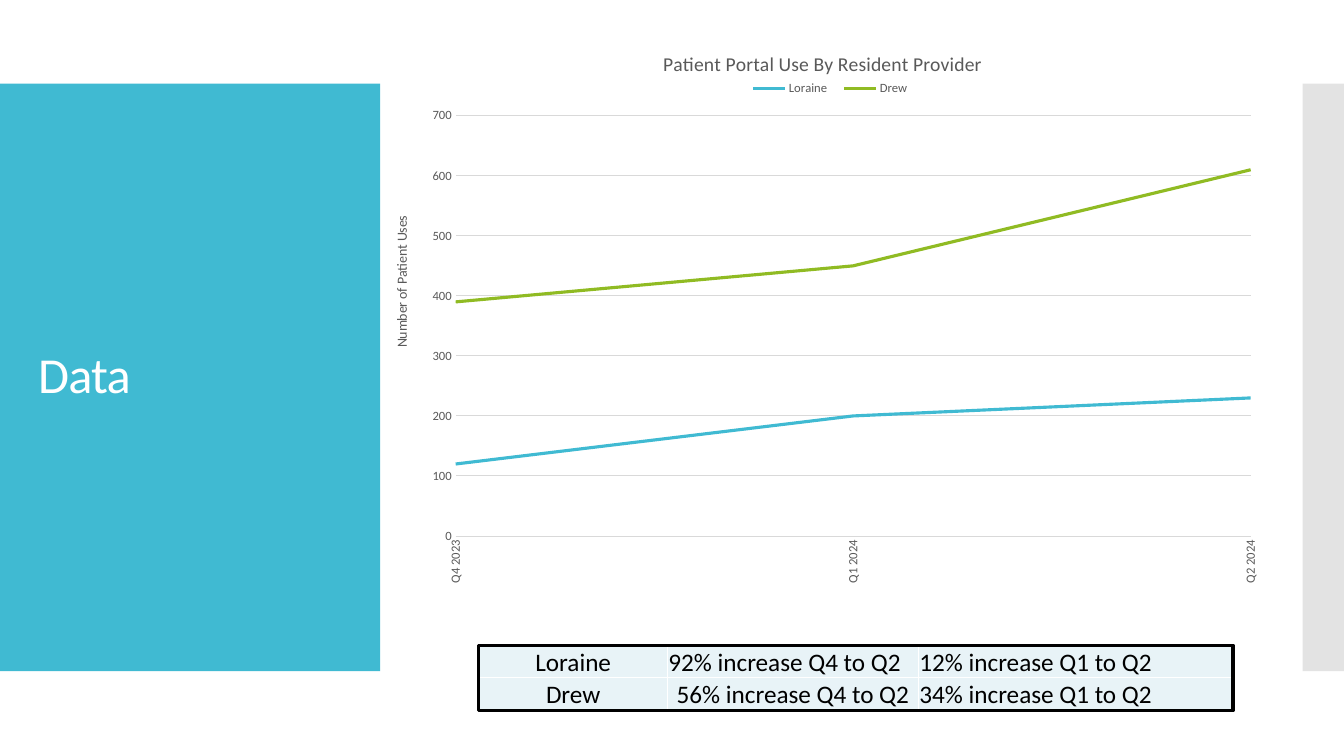
from dataclasses import dataclass

from lxml import etree
from pptx import Presentation
from pptx.chart.data import CategoryChartData
from pptx.dml.color import RGBColor
from pptx.enum.chart import XL_CHART_TYPE as ChartType
from pptx.enum.chart import XL_LEGEND_POSITION as LegendPosition
from pptx.enum.chart import XL_MARKER_STYLE as MarkerStyle
from pptx.enum.chart import XL_TICK_MARK as TickMark
from pptx.enum.shapes import MSO_SHAPE as ShapeType
from pptx.enum.text import MSO_ANCHOR as Anchor
from pptx.enum.text import PP_ALIGN as Align
from pptx.oxml.ns import qn
from pptx.util import Inches, Pt

FONT = "Calibri"
WHITE = RGBColor(0xFF, 0xFF, 0xFF)
BLACK = RGBColor(0x00, 0x00, 0x00)
TEAL = RGBColor(0x40, 0xBA, 0xD2)
GREEN = RGBColor(0x90, 0xBB, 0x23)
SIDE_GRAY = RGBColor(0xC8, 0xC8, 0xC8)
TEXT_GRAY = RGBColor(0x59, 0x59, 0x59)
GRID_GRAY = RGBColor(0xD9, 0xD9, 0xD9)
CELL_BLUE = RGBColor(0xE8, 0xF3, 0xF7)


@dataclass
class Box:
    left: float
    top: float
    width: float
    height: float

    def lengths(self) -> list:
        return [Inches(v) for v in (self.left, self.top, self.width, self.height)]


@dataclass
class Panel:
    box: Box
    fill: RGBColor | None = None
    alpha: int | None = None
    line: RGBColor | None = None


@dataclass
class Provider:
    name: str
    uses: tuple
    color: RGBColor
    growth: tuple
    growth_align: Align


QUARTERS = ("Q4 2023", "Q1 2024", "Q2 2024")
PROVIDERS = (
    Provider("Loraine", (120, 200, 230), TEAL,
             ("92% increase Q4 to Q2", "12% increase Q1 to Q2"), Align.LEFT),
    Provider("Drew", (390, 450, 610), GREEN,
             ("56% increase Q4 to Q2", "34% increase Q1 to Q2"), Align.CENTER),
)
TABLE_BOX = Box(4.75, 6.4, 7.48, 0.65)
COLUMN_WIDTHS = (1.87, 2.49, 3.11)
SIDE_PANELS = (
    Panel(Box(0, 0.83, 3.77, 5.83), fill=TEAL),
    Panel(Box(12.92, 0.83, 0.42, 5.83), fill=SIDE_GRAY, alpha=50),
)
TABLE_FRAME = Panel(TABLE_BOX, line=BLACK)


def set_font(font, size: float, color: RGBColor) -> None:
    formats = {"name": FONT, "size": Pt(size), "bold": False}
    for attribute, value in formats.items():
        setattr(font, attribute, value)
    font.color.rgb = color


def add_panel(slide, panel: Panel) -> None:
    shape = slide.shapes.add_shape(ShapeType.RECTANGLE, *panel.box.lengths())
    shape.shadow.inherit = False
    if panel.fill is None:
        shape.fill.background()
    else:
        shape.fill.solid()
        shape.fill.fore_color.rgb = panel.fill
    if panel.alpha is not None:
        color = shape.fill._xPr.find(".//" + qn("a:srgbClr"))
        etree.SubElement(color, qn("a:alpha"), val=str(panel.alpha * 1000))
    if panel.line is None:
        shape.line.fill.background()
    else:
        shape.line.color.rgb = panel.line
        shape.line.width = Pt(2.25)


def add_heading(slide) -> None:
    frame = slide.shapes.add_textbox(*Box(0.28, 1.23, 3.22, 5.03).lengths()).text_frame
    frame.word_wrap = True
    frame.vertical_anchor = Anchor.MIDDLE
    paragraph = frame.paragraphs[0]
    paragraph.line_spacing = 0.9
    run = paragraph.add_run()
    run.text = "Data"
    set_font(run.font, 36, WHITE)
    run.font._element.set("spc", "-60")


def place(parent, after: str | None, **layout) -> None:
    """Give a chart part a manual layout, in fractions of the chart."""
    for old in parent.findall(qn("c:layout")):
        parent.remove(old)
    element = etree.Element(qn("c:layout"))
    manual = etree.SubElement(element, qn("c:manualLayout"))
    for tag, value in layout.items():
        etree.SubElement(manual, qn("c:" + tag), val=str(value))
    if after is None:
        parent.insert(0, element)
    else:
        parent.find(qn(after)).addnext(element)


def set_title(owner, text: str, size: float, x: float, y: float):
    title = owner.axis_title if hasattr(owner, "axis_title") else owner.chart_title
    title.text_frame.text = text
    set_font(title.text_frame.paragraphs[0].runs[0].font, size, TEXT_GRAY)
    place(title._element, "c:tx", xMode="edge", yMode="edge", x=x, y=y)
    return title


def add_usage_chart(slide) -> None:
    data = CategoryChartData(number_format="0")
    data.categories = QUARTERS
    for provider in PROVIDERS:
        data.add_series(provider.name, provider.uses)
    box = Box(3.78, 0.23, 8.91, 5.89)
    chart = slide.shapes.add_chart(ChartType.LINE, *box.lengths(), data).chart
    set_font(chart.font, 10, BLACK)
    set_title(chart, "Patient Portal Use By Resident Provider", 14, 0.31, 0.04)

    # Plot and series
    chart.plots[0].vary_by_categories = False
    place(chart._chartSpace.chart.plotArea, None, layoutTarget="inner", xMode="edge",
          yMode="edge", x=0.083, y=0.156, w=0.885, h=0.708)
    for series, provider in zip(chart.plots[0].series, PROVIDERS):
        series.smooth = False
        series.marker.style = MarkerStyle.NONE
        series.format.line.color.rgb = provider.color
        series.format.line.width = Pt(2.25)

    # Legend
    chart.has_legend = True
    chart.legend.position = LegendPosition.BOTTOM
    chart.legend.include_in_layout = False
    set_font(chart.legend.font, 9, TEXT_GRAY)
    place(chart.legend._element, "c:legendPos", xMode="edge", yMode="edge",
          x=0.4, y=0.08, w=0.2, h=0.06)

    # Axes
    quarters, uses = chart.category_axis, chart.value_axis
    for axis in (quarters, uses):
        axis.major_tick_mark = axis.minor_tick_mark = TickMark.NONE
        set_font(axis.tick_labels.font, 9, TEXT_GRAY)
    body = quarters._element.find(qn("c:txPr")).find(qn("a:bodyPr"))
    body.set("rot", "-5400000")
    body.set("vert", "horz")
    uses.minimum_scale, uses.maximum_scale, uses.major_unit = 0, 700, 100
    uses.format.line.fill.background()
    crossing = etree.Element(qn("c:crossBetween"), val="midCat")
    uses._element.find(qn("c:crosses")).addnext(crossing)
    for line in (quarters.format.line, uses.major_gridlines.format.line):
        line.color.rgb = GRID_GRAY
        line.width = Pt(0.75)
    title = set_title(uses, "Number of Patient Uses", 10, 0.01, 0.32)
    title.text_frame._txBody.find(qn("a:bodyPr")).set("rot", "-5400000")


def fill_cell(cell, text: str, align: Align) -> None:
    formats = {"margin_left": Inches(0.01), "margin_right": Inches(0.01),
               "margin_top": Inches(0.01), "margin_bottom": 0,
               "vertical_anchor": Anchor.BOTTOM, "text": text}
    for attribute, value in formats.items():
        setattr(cell, attribute, value)
    paragraph = cell.text_frame.paragraphs[0]
    paragraph.alignment = align
    set_font(paragraph.runs[0].font, 18, BLACK)
    properties = cell._tc.get_or_add_tcPr()
    for side in ("lnL", "lnR", "lnT", "lnB"):
        border = etree.SubElement(properties, qn("a:" + side), w=str(Pt(1)))
        solid = etree.SubElement(border, qn("a:solidFill"))
        etree.SubElement(solid, qn("a:srgbClr"), val=str(WHITE))
    cell.fill.solid()
    cell.fill.fore_color.rgb = CELL_BLUE


def add_growth_table(slide) -> None:
    table = slide.shapes.add_table(len(PROVIDERS), len(COLUMN_WIDTHS),
                                   *TABLE_BOX.lengths()).table
    for column, width in zip(table.columns, COLUMN_WIDTHS):
        column.width = Inches(width)
    for row, provider in zip(table.rows, PROVIDERS):
        texts = (provider.name, *provider.growth)
        aligns = (Align.CENTER, provider.growth_align, Align.LEFT)
        for cell, text, align in zip(row.cells, texts, aligns):
            fill_cell(cell, text, align)


def main() -> None:
    presentation = Presentation()
    presentation.slide_width, presentation.slide_height = Inches(13.33), Inches(7.5)
    slide = presentation.slides.add_slide(presentation.slide_layouts[6])
    for panel in SIDE_PANELS:
        add_panel(slide, panel)
    add_heading(slide)
    add_usage_chart(slide)
    add_growth_table(slide)
    add_panel(slide, TABLE_FRAME)
    presentation.save("out.pptx")


if __name__ == "__main__":
    main()
